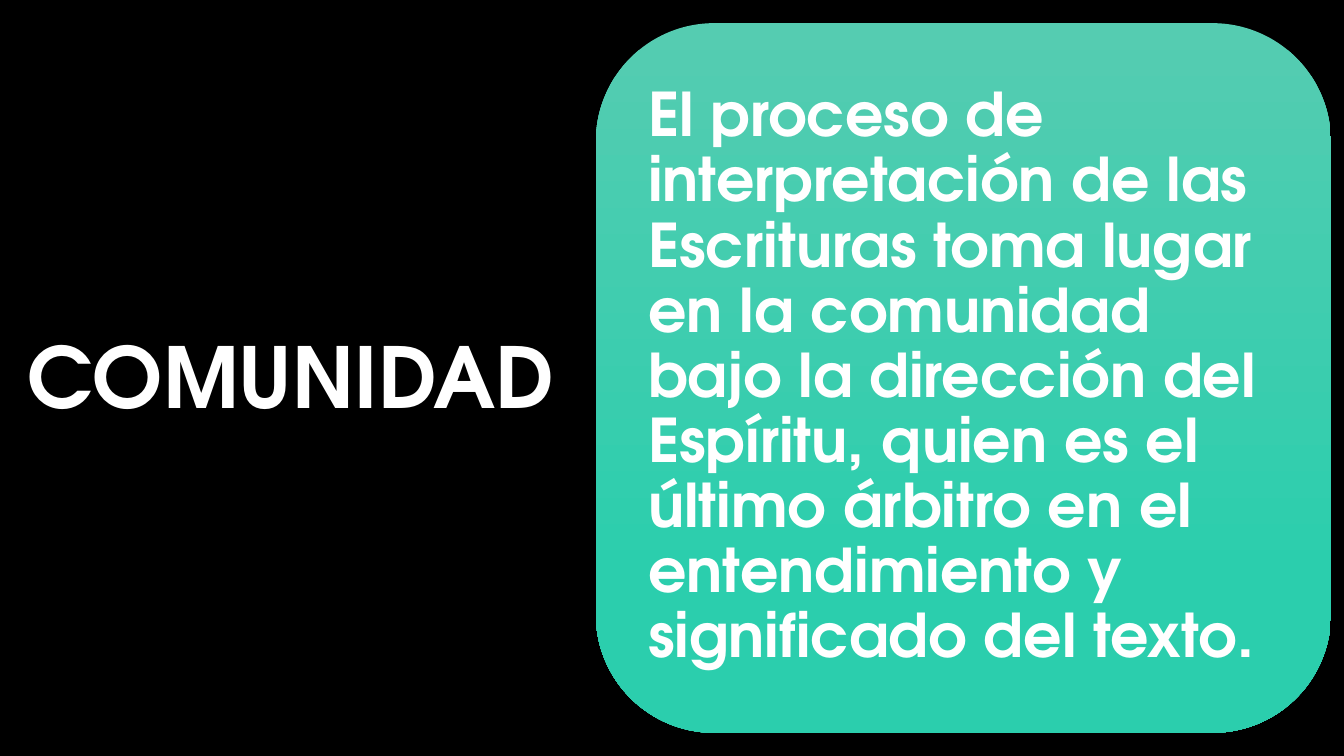
from dataclasses import dataclass

from pptx import Presentation
from pptx.dml.color import RGBColor
from pptx.enum.shapes import MSO_SHAPE as Shape
from pptx.enum.text import MSO_ANCHOR as Anchor, PP_ALIGN as Align
from pptx.slide import Slide
from pptx.util import Inches, Pt


@dataclass(frozen=True)
class Theme:
    font: str = "TeX Gyre Adventor"
    background: str = "000000"
    text: str = "FFFFFF"
    panel_stops: tuple[tuple[float, str], ...] = ((0, "55CCB1"), (0.78, "2BCEAD"))
    title_size: int = 60
    body_size: int = 43
    line_spacing: float = 0.9


@dataclass(frozen=True)
class Box:
    left: float
    top: float
    width: float
    height: float

    def lengths(self) -> tuple[Inches, Inches, Inches, Inches]:
        return Inches(self.left), Inches(self.top), Inches(self.width), Inches(self.height)


@dataclass(frozen=True)
class TextBlock:
    box: Box
    text: str
    size: int
    align: Align
    side_inset: float
    end_inset: float


THEME = Theme()
PANEL = Box(5.91, 0.23, 7.29, 7.04)
TEXT_BLOCKS = (
    TextBlock(Box(0.14, 1.53, 5.49, 4.5), "COMUNIDAD", THEME.title_size, Align.CENTER, 0.1, 0.05),
    TextBlock(
        Box(6.25, 0.57, 6.6, 6.35),
        "El proceso de interpretación de las Escrituras toma lugar en la comunidad "
        "bajo la dirección del Espíritu, quien es el último árbitro en el "
        "entendimiento y significado del texto.",
        THEME.body_size, Align.LEFT, 0.18, 0.18,
    ),
)


def draw_panel(slide: Slide, box: Box) -> None:
    shape = slide.shapes.add_shape(Shape.ROUNDED_RECTANGLE, *box.lengths())
    shape.shadow.inherit = False
    shape.line.fill.background()
    shape.fill.gradient()
    shape.fill.gradient_angle = 270
    for stop, (position, color) in zip(shape.fill.gradient_stops, THEME.panel_stops):
        stop.position = position
        stop.color.rgb = RGBColor.from_string(color)


def draw_text(slide: Slide, block: TextBlock) -> None:
    frame = slide.shapes.add_textbox(*block.box.lengths()).text_frame
    frame.word_wrap = True
    frame.vertical_anchor = Anchor.MIDDLE
    frame.margin_left = frame.margin_right = Inches(block.side_inset)
    frame.margin_top = frame.margin_bottom = Inches(block.end_inset)
    paragraph = frame.paragraphs[0]
    paragraph.alignment = block.align
    paragraph.line_spacing = THEME.line_spacing
    run = paragraph.add_run()
    run.text = block.text
    run.font.name = THEME.font
    run.font.size = Pt(block.size)
    run.font.bold = True
    run.font.color.rgb = RGBColor.from_string(THEME.text)


def main() -> None:
    """Build the slide on community and interpretation."""
    presentation = Presentation()
    presentation.slide_width = Inches(13.33)
    presentation.slide_height = Inches(7.5)
    slide = presentation.slides.add_slide(presentation.slide_layouts[6])
    slide.background.fill.solid()
    slide.background.fill.fore_color.rgb = RGBColor.from_string(THEME.background)
    draw_panel(slide, PANEL)
    for block in TEXT_BLOCKS:
        draw_text(slide, block)
    presentation.save("out.pptx")


if __name__ == "__main__":
    main()
